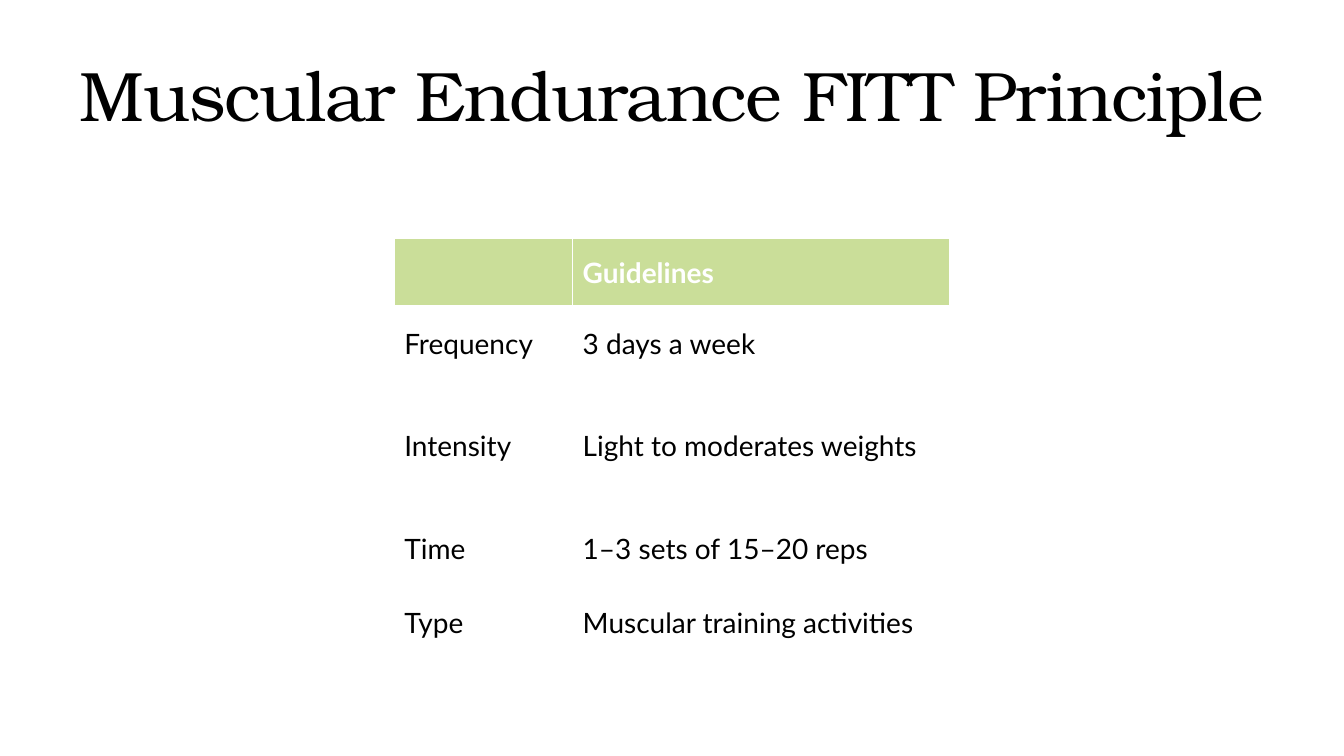
from dataclasses import dataclass

from lxml.etree import SubElement as Sub
from pptx import Presentation
from pptx.dml.color import RGBColor as Rgb
from pptx.enum.text import MSO_ANCHOR as Anchor, PP_ALIGN as Align
from pptx.oxml.ns import qn
from pptx.slide import Slide
from pptx.table import _Cell as Cell
from pptx.text.text import _Paragraph as Para
from pptx.util import Inches, Pt


@dataclass(frozen=True)
class Theme:
    """Colours, fonts and type sizes of the slide."""
    ink: str = "000000"
    paper: str = "FFFFFF"
    green: str = "CADE99"
    serif: str = "TeX Gyre Bonum"
    sans: str = "Lato"
    title: float = 50
    body: float = 20


@dataclass(frozen=True)
class Row:
    """One table row: label, guideline, height in inches."""
    label: str
    guide: str
    height: float
    head: bool = False


THEME = Theme()
COLS = (1.77, 3.74)
ROWS = (
    Row("", "Guidelines", 0.67, True),
    Row("Frequency", "3 days a week", 0.74),
    Row("Intensity", "Light to moderates weights", 1.29),
    Row("Time", "1–3 sets of 15–20 reps", 0.74),
    Row("Type", "Muscular training activities", 0.74),
)


def style(para: Para, face: str, size: float, color: str, bold: bool = False) -> None:
    """Set the font of a paragraph."""
    font = para.font
    font.name, font.size, font.bold = face, Pt(size), bold
    font.color.rgb = Rgb.from_string(color)


def border(cell: Cell, side: str, width: float) -> None:
    """Draw one white cell edge."""
    props = cell._tc.get_or_add_tcPr()
    line = Sub(props, qn(f"a:ln{side}"), w=str(Pt(width)))
    Sub(Sub(line, qn("a:solidFill")), qn("a:srgbClr"), val=THEME.paper)


def add_title(slide: Slide, text: str) -> None:
    """Add the centred heading."""
    box = slide.shapes.add_textbox(Inches(0), Inches(0.56), Inches(13.33), Inches(1.45))
    frame = box.text_frame
    frame.word_wrap = True
    frame.vertical_anchor = Anchor.TOP
    para = frame.paragraphs[0]
    para.alignment, para.line_spacing = Align.CENTER, 0.9
    run = para.add_run()
    run.text = text
    run.font._element.set("spc", "-100")
    style(para, THEME.serif, THEME.title, THEME.ink)


def fill_cell(cell: Cell, text: str, head: bool) -> None:
    """Write and colour one cell."""
    for side in "LRTB":
        border(cell, side, 3 if head and side == "B" else 1)
    cell.fill.solid()
    cell.fill.fore_color.rgb = Rgb.from_string(THEME.green if head else THEME.paper)
    cell.vertical_anchor = Anchor.MIDDLE
    cell.text = text
    color = THEME.paper if head else THEME.ink
    style(cell.text_frame.paragraphs[0], THEME.sans, THEME.body, color, head)


def add_guide(slide: Slide) -> None:
    """Add the table of guidelines."""
    high = sum(row.height for row in ROWS)
    frame = slide.shapes.add_table(
        len(ROWS), len(COLS), Inches(3.91), Inches(2.37), Inches(sum(COLS)), Inches(high))
    table = frame.table
    table.horz_banding = False
    for col, width in zip(table.columns, COLS):
        col.width = Inches(width)
    for line, row in zip(table.rows, ROWS):
        line.height = Inches(row.height)
        for cell, text in zip(line.cells, (row.label, row.guide)):
            fill_cell(cell, text, row.head)


def main() -> None:
    """Build and save the slide."""
    deck = Presentation()
    deck.slide_width, deck.slide_height = Inches(13.33), Inches(7.5)
    slide = deck.slides.add_slide(deck.slide_layouts[6])
    add_title(slide, "Muscular Endurance FITT Principle")
    add_guide(slide)
    deck.save("out.pptx")


if __name__ == "__main__":
    main()
